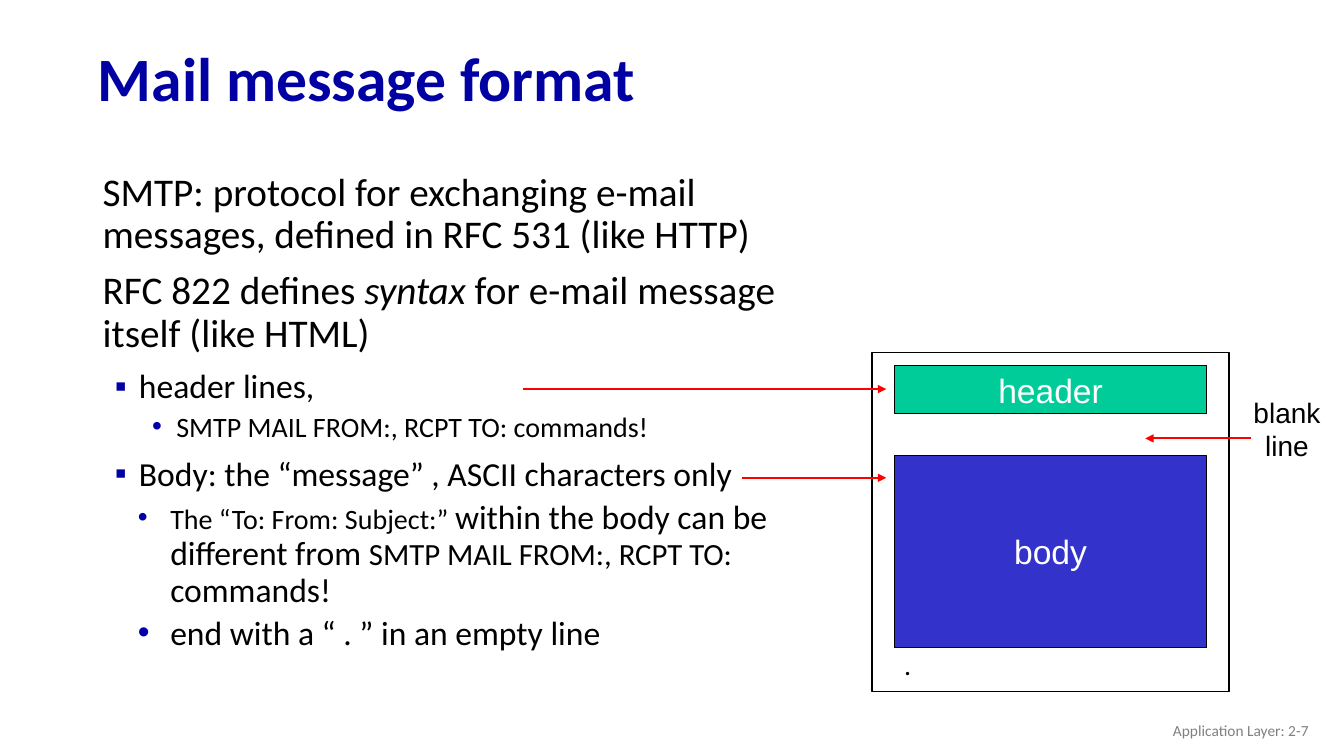
from lxml import etree
from pptx import Presentation
from pptx.dml.color import RGBColor
from pptx.enum.shapes import MSO_CONNECTOR, MSO_SHAPE
from pptx.enum.text import MSO_ANCHOR, MSO_AUTO_SIZE, PP_ALIGN
from pptx.oxml.ns import qn
from pptx.util import Inches, Pt

LEFT, CENTER, RIGHT = PP_ALIGN.LEFT, PP_ALIGN.CENTER, PP_ALIGN.RIGHT
TOP, MIDDLE = MSO_ANCHOR.TOP, MSO_ANCHOR.MIDDLE
RECTANGLE, STRAIGHT = MSO_SHAPE.RECTANGLE, MSO_CONNECTOR.STRAIGHT
NO_AUTOFIT = MSO_AUTO_SIZE.NONE

COLORS = {
    "title": "0000A3", "square": "0000A3", "dot": "0000A8",
    "black": "000000", "white": "FFFFFF", "gray": "808080",
    "header": "00CC99", "body": "3333CC", "arrow": "FF0000",
}

TITLE = "Mail message format"
FOOTER = "Application Layer: 2-7"

# style: level, left margin, first-line indent, space before, bullet, bullet colour
STYLES = {
    "plain": (0, 0.02, 0, 10, None, None),
    "square": (0, 0.38, -0.24, 10, "▪", "square"),
    "near dot": (1, 0.75, -0.24, 5, "•", "dot"),
    "far dot": (1, 0.69, -0.32, 5, "•", "dot"),
}
# style, then runs of (text, size, italic)
POINTS = [
    ("plain", [("SMTP: protocol for exchanging e-mail messages, "
                "defined in RFC 531 (like HTTP)", 28, False)]),
    ("plain", [("RFC 822 defines ", 28, False), ("syntax", 28, True),
               (" for e-mail message itself (like HTML)", 28, False)]),
    ("square", [("header lines,", 24, False)]),
    ("near dot", [("SMTP MAIL FROM:, RCPT TO: commands!", 20, False)]),
    ("square", [("Body: the “message” , ASCII characters only", 24, False)]),
    ("far dot", [("The “To: From: Subject:” ", 20, False),
                 ("within the body can be different from ", 24, False),
                 ("SMTP MAIL FROM:, RCPT TO:", 22, False),
                 (" commands!", 24, False)]),
    ("far dot", [("end with a “ . ” in an empty line", 24, False)]),
]
# name, top, height
PARTS = [("header", 3.63, 0.47), ("body", 4.52, 1.9)]
PART_LEFT, PART_WIDTH = 8.87, 3.1
FRAME = (8.65, 3.5, 3.54, 3.36)
# start x, end x, y, width
ARROWS = [(7.36, 8.79, 4.74, 1.5), (12.41, 11.36, 4.35, 1.5), (5.19, 8.79, 3.86, 1)]


def color(name):
    return RGBColor.from_string(COLORS[name])


def add_span(para, text, size, font, color_name, bold=False, italic=False):
    span = para.add_run()
    span.text = text
    span.font.size = Pt(size)
    span.font.name = font
    span.font.bold = bold
    span.font.italic = italic
    span.font.color.rgb = color(color_name)


def fill_frame(frame, lines, size, font, color_name, align, anchor, wrap, bold=False):
    """Write one paragraph per line, all in the same format."""
    frame.word_wrap = wrap
    frame.auto_size = NO_AUTOFIT
    frame.vertical_anchor = anchor
    for index, line in enumerate(lines):
        para = frame.add_paragraph() if index else frame.paragraphs[0]
        para.alignment = align
        add_span(para, line, size, font, color_name, bold)


def add_text(page, place, *text_format):
    box = page.shapes.add_textbox(*map(Inches, place))
    fill_frame(box.text_frame, *text_format)


def add_point(para, style, runs):
    level, margin, indent, before, bullet, bullet_color = STYLES[style]
    para.level = level
    para.line_spacing = 0.9
    para.space_before = Pt(before)
    properties = para._p.get_or_add_pPr()
    properties.set("marL", str(Inches(margin)))
    properties.set("indent", str(Inches(indent)))
    if bullet:
        tint = etree.SubElement(properties, qn("a:buClr"))
        etree.SubElement(tint, qn("a:srgbClr"), val=COLORS[bullet_color])
        etree.SubElement(properties, qn("a:buFont"), typeface="Arial")
        etree.SubElement(properties, qn("a:buChar"), char=bullet)
    for text, size, italic in runs:
        add_span(para, text, size, "Calibri", "black", italic=italic)


def add_rectangle(page, place, line_width, fill=None):
    box = page.shapes.add_shape(RECTANGLE, *map(Inches, place))
    box.shadow.inherit = False
    box.line.color.rgb = color("black")
    box.line.width = Pt(line_width)
    if fill:
        box.fill.solid()
        box.fill.fore_color.rgb = color(fill)
    else:
        box.fill.background()
    return box


def add_arrow(page, start, end, y, width):
    arrow = page.shapes.add_connector(
        STRAIGHT, Inches(start), Inches(y), Inches(end), Inches(y))
    arrow.line.color.rgb = color("arrow")
    arrow.line.width = Pt(width)
    properties = arrow._element.spPr
    etree.SubElement(properties.find(qn("a:ln")), qn("a:tailEnd"), type="triangle")
    etree.SubElement(properties, qn("a:effectLst"))


def main():
    deck = Presentation()
    deck.slide_width, deck.slide_height = Inches(13.33), Inches(7.5)
    page = deck.slides.add_slide(deck.slide_layouts[5])

    title = page.shapes.title
    title.left, title.top = Inches(0.87), Inches(0.32)
    title.width, title.height = Inches(11.5), Inches(0.98)
    fill_frame(title.text_frame, [TITLE], 44, "Calibri", "title", LEFT, MIDDLE, True, True)
    title.text_frame.paragraphs[0].line_spacing = 0.9

    add_text(page, (10.08, 7.05, 3, 0.4), [FOOTER], 11, "Calibri", "gray",
             RIGHT, MIDDLE, True)

    points = page.shapes.add_textbox(*map(Inches, (0.9, 1.66, 6.98, 5.08))).text_frame
    points.word_wrap = True
    for index, (style, runs) in enumerate(POINTS):
        para = points.add_paragraph() if index else points.paragraphs[0]
        add_point(para, style, runs)

    for name, top, height in PARTS:
        part = add_rectangle(page, (PART_LEFT, top, PART_WIDTH, height), 0.75, name)
        fill_frame(part.text_frame, [name], 24, "Arial", "white", CENTER, MIDDLE, False)
    add_rectangle(page, FRAME, 1)

    for arrow in ARROWS:
        add_arrow(page, *arrow)
    add_text(page, (12.33, 3.87, 0.87, 0.77), ["blank", "line"], 20, "Arial", "black",
             CENTER, TOP, False)
    add_text(page, (PART_LEFT, 6.37, 0.27, 0.44), ["."], 20, "Calibri", "black",
             LEFT, TOP, False)

    deck.save("out.pptx")


if __name__ == "__main__":
    main()
